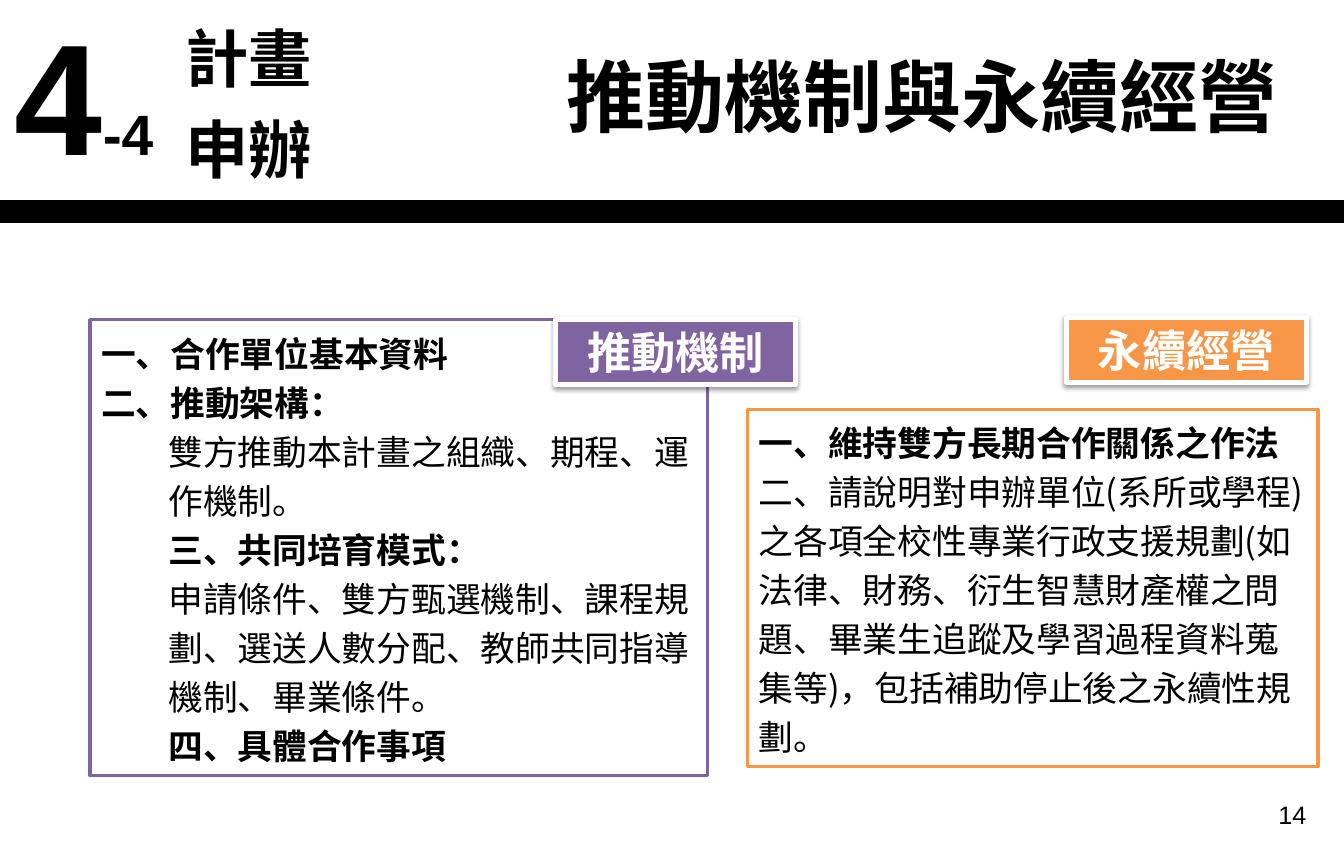
"""Builds the slide on the promotion mechanism and sustainable operation."""
from lxml import etree
from pptx import Presentation
from pptx.dml.color import RGBColor
from pptx.enum.shapes import MSO_CONNECTOR as CONN, MSO_SHAPE as SHAPE
from pptx.enum.text import MSO_ANCHOR as ANCHOR, PP_ALIGN as ALIGN
from pptx.oxml.ns import qn
from pptx.util import Cm, Pt

COLORS = {"black": "000000", "white": "FFFFFF", "purple": "8064A2", "orange": "F79646"}
COLORS = {name: RGBColor.from_string(value) for name, value in COLORS.items()}
CJK = "Noto Sans CJK SC"
NO_STYLE = "{2D5ABB26-0587-4C30-8999-92F81FD0307C}"


def style(p, size, bold=False, color="black", font=CJK, align=ALIGN.LEFT):
    p.alignment = align
    f = p.font
    f.size, f.bold, f.name = Pt(size), bold, font
    f.color.rgb = COLORS[color]
    def_rpr = p._p.pPr.find(qn("a:defRPr"))
    etree.SubElement(def_rpr, qn("a:ea"), typeface=CJK)


def add_rect(s, x, y, w, h, fill, line, line_width):
    sp = s.shapes.add_shape(SHAPE.RECTANGLE, Cm(x), Cm(y), Cm(w), Cm(h))
    sp.shadow.inherit = False
    sp.fill.solid()
    sp.fill.fore_color.rgb = COLORS[fill]
    sp.line.color.rgb = COLORS[line]
    sp.line.width = Pt(line_width)
    sp.text_frame.word_wrap = True
    return sp


prs = Presentation()
prs.slide_width, prs.slide_height = Cm(30), Cm(19.05)
s = prs.slides.add_slide(prs.slide_layouts[6])

rule = s.shapes.add_connector(CONN.STRAIGHT, 0, Cm(4.72), prs.slide_width, Cm(4.72))
rule.line.color.rgb = COLORS["black"]
rule.line.width = Pt(15)
etree.SubElement(rule.element.spPr, qn("a:effectLst"))

texts = [
    ("14", 22.4, 17.73, 7.01, 1.32, 16, False, "Arial", ALIGN.RIGHT),
    ("推動機制與永續經營", 12.4, 0.94, 16.54, 2.39, 50, True, CJK, ALIGN.LEFT),
]
for text, x, y, w, h, size, bold, font, align in texts:
    tf = s.shapes.add_textbox(Cm(x), Cm(y), Cm(w), Cm(h)).text_frame
    tf.word_wrap = True
    tf.text = text
    style(tf.paragraphs[0], size, bold, font=font, align=align)

panels = [
    (2.01, 7.14, 13.79, 10.19, "purple", [
        ("一、合作單位基本資料", True, 0),
        ("二、推動架構：", True, 0),
        ("雙方推動本計畫之組織、期程、運作機制。", False, 1.5),
        ("三、共同培育模式：", True, 1.5),
        ("申請條件、雙方甄選機制、課程規劃、選送人數分配、教師共同指導機制、畢業條件。", False, 1.5),
        ("四、具體合作事項", True, 1.5),
    ]),
    (16.69, 9.14, 12.73, 7.98, "orange", [
        ("一、維持雙方長期合作關係之作法", True, 0),
        ("二、請說明對申辦單位(系所或學程)之各項全校性專業行政支援規劃"
         "(如法律、財務、衍生智慧財產權之問題、畢業生追蹤及學習過程資料蒐集等)，"
         "包括補助停止後之永續性規劃。", False, 0),
    ]),
]
for x, y, w, h, color, lines in panels:
    tf = add_rect(s, x, y, w, h, "white", color, 2).text_frame
    tf.vertical_anchor = ANCHOR.TOP
    tf.text = "\n".join(text for text, _, _ in lines)
    for p, (_, bold, indent) in zip(tf.paragraphs, lines):
        style(p, 22, bold)
        p.line_spacing = Pt(31)
        p._p.pPr.set("marL", str(Cm(indent)))
        p._p.pPr.set("indent", "0")

labels = [("永續經營", 23.8, 7.09, "orange"), ("推動機制", 12.4, 7.14, "purple")]
for text, x, y, color in labels:
    sp = add_rect(s, x, y, 5.36, 1.45, color, "white", 3)
    effects = sp.element.spPr.find(qn("a:effectLst"))
    shadow = etree.SubElement(effects, qn("a:outerShdw"), blurRad=str(Pt(3.1)),
                              dist=str(Pt(1.6)), dir="5400000", rotWithShape="0")
    shade = etree.SubElement(shadow, qn("a:srgbClr"), val=str(COLORS["black"]))
    etree.SubElement(shade, qn("a:alpha"), val="38000")
    tf = sp.text_frame
    tf.vertical_anchor = ANCHOR.MIDDLE
    tf.text = text
    style(tf.paragraphs[0], 28, True, "white", align=ALIGN.CENTER)

frame = s.shapes.add_table(1, 2, Cm(0.08), 0, Cm(7.62), Cm(4.5))
frame.element.find(".//" + qn("a:tableStyleId")).text = NO_STYLE
table = frame.table
table.first_row = table.horz_banding = False
section = [[("4", 100), ("-4", 36)], [("計畫申辦", 40)]]
for cell, runs in zip(table.rows[0].cells, section):
    cell.fill.background()
    cell.vertical_anchor = ANCHOR.MIDDLE
    p = cell.text_frame.paragraphs[0]
    style(p, runs[0][1], True, font="Arial")
    for text, size in runs:
        r = p.add_run()
        r.text = text
        r.font.size = Pt(size)

prs.save("out.pptx")
